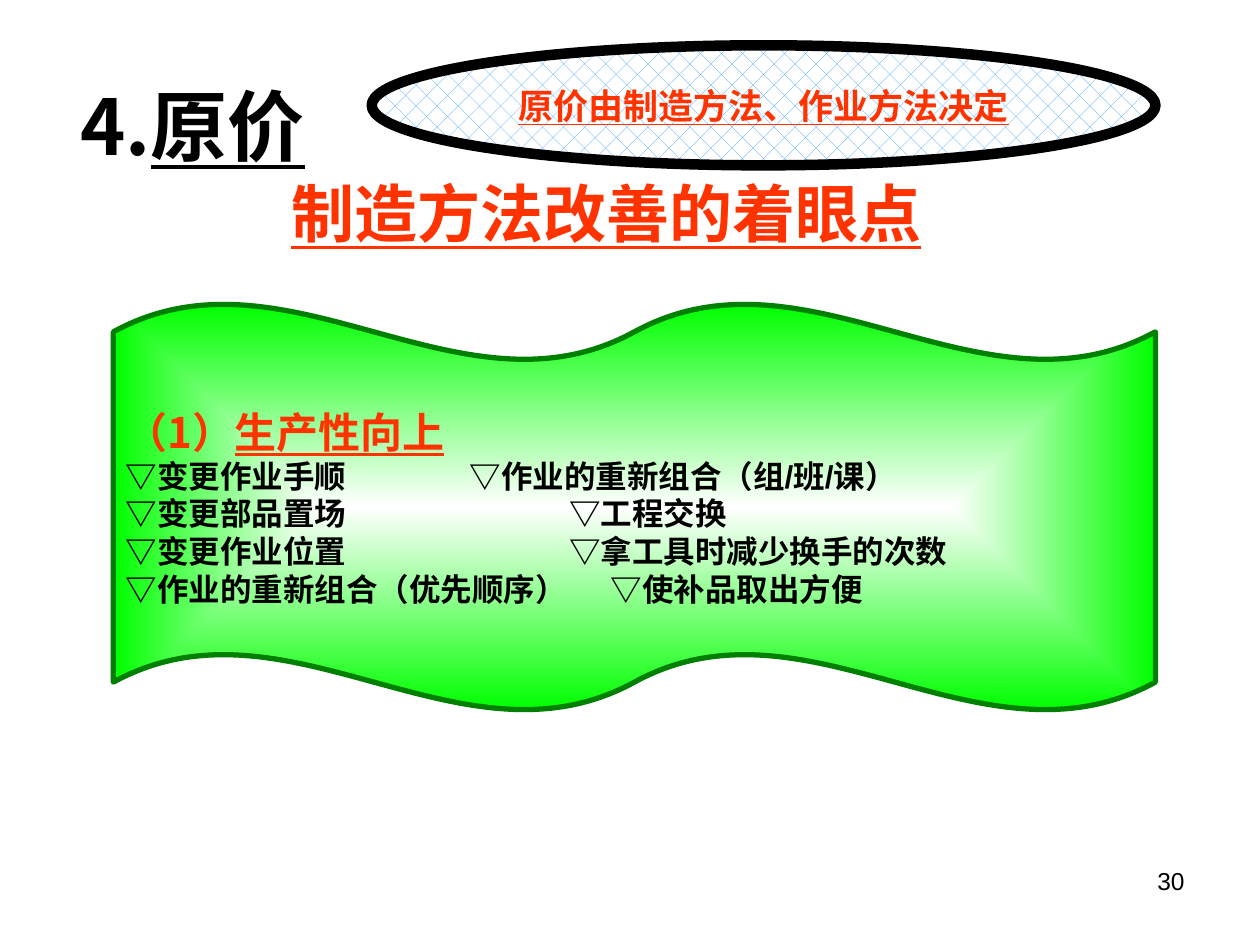
from lxml.etree import SubElement
from pptx import Presentation
from pptx.dml.color import RGBColor
from pptx.enum.dml import MSO_PATTERN
from pptx.enum.shapes import MSO_SHAPE
from pptx.enum.text import MSO_ANCHOR, PP_ALIGN
from pptx.oxml.ns import qn
from pptx.util import Inches, Pt

COLORS = {"black": "000000", "white": "FFFFFF", "red": "FF3300",
          "green": "00FF00", "edge": "008000", "blue": "3399FF"}
LATIN, CJK = "Arial", "Noto Sans CJK SC"
WIDTH, HEIGHT = 10, 7.5

IDEAS = [
    ("▽变更作业手顺", "▽作业的重新组合（组/班/课）", 2.73),
    ("▽变更部品置场", "▽工程交换", 3.52),
    ("▽变更作业位置", "▽拿工具时减少换手的次数", 3.52),
    ("▽作业的重新组合（优先顺序）", "▽使补品取出方便", 3.85),
]


def color(name):
    return RGBColor.from_string(COLORS[name])


def place(box):
    x, y, w, h = box
    return Inches(x * WIDTH), Inches(y * HEIGHT), Inches(w * WIDTH), Inches(h * HEIGHT)


def add_run(p, text, size, fill="black", font=LATIN, bold=True, underline=False):
    r = p.add_run()
    r.text = text
    r.font.size, r.font.bold, r.font.underline = Pt(size), bold, underline
    r.font.name = font
    r.font.color.rgb = color(fill)
    SubElement(r.font._element, qn("a:ea")).set("typeface", CJK)


def set_frame(sp, anchor=MSO_ANCHOR.MIDDLE, align=PP_ALIGN.LEFT, wrap=True):
    tf = sp.text_frame
    tf.word_wrap, tf.vertical_anchor = wrap, anchor
    tf.paragraphs[0].alignment = align
    return tf


def add_text(s, box, **frame):
    return set_frame(s.shapes.add_textbox(*place(box)), **frame).paragraphs[0]


def add_outlined(s, kind, box, line, width):
    sp = s.shapes.add_shape(kind, *place(box))
    sp.shadow.inherit = False
    sp.line.color.rgb = color(line)
    sp.line.width = Pt(width)
    return sp


def add_heading(s, box):
    p = add_text(s, box)
    add_run(p, "4.", 44, font=CJK)
    add_run(p, "原价", 44, font=CJK, underline=True)


def add_subtitle(s, box):
    p = add_text(s, box, align=PP_ALIGN.CENTER)
    add_run(p, "制造方法改善的着眼点", 36, "red", underline=True)


def add_motto(s, box):
    sp = add_outlined(s, MSO_SHAPE.OVAL, box, "black", 6)
    sp.fill.patterned()
    sp.fill.pattern = MSO_PATTERN.DOTTED_DIAMOND
    sp.fill.fore_color.rgb = color("blue")
    sp.fill.back_color.rgb = color("white")
    p = set_frame(sp, align=PP_ALIGN.CENTER, wrap=False).paragraphs[0]
    add_run(p, "原价由制造方法、作业方法决定", 20, "red", underline=True)


def fill_from_center(sp, inner, outer):
    sp.fill.gradient()
    for stop, name in zip(sp.fill.gradient_stops, (inner, outer)):
        stop.color.rgb = color(name)
    grad = sp._element.spPr.find(qn("a:gradFill"))
    grad.remove(grad.find(qn("a:lin")))
    shade = SubElement(grad, qn("a:path"))
    shade.set("path", "rect")
    center = SubElement(shade, qn("a:fillToRect"))
    for side in "ltrb":
        center.set(side, "50000")


def add_tab(p, pos):
    tabs = SubElement(p._p.get_or_add_pPr(), qn("a:tabLst"))
    tab = SubElement(tabs, qn("a:tab"))
    tab.set("pos", str(Inches(pos)))
    tab.set("algn", "l")


def add_wave(s, box):
    sp = add_outlined(s, MSO_SHAPE.DOUBLE_WAVE, box, "edge", 3)
    sp.adjustments[0], sp.adjustments[1] = 0.07, 0
    fill_from_center(sp, "white", "green")
    tf = set_frame(sp)
    p = tf.paragraphs[0]
    add_run(p, "（1）", 24, "red", CJK)
    add_run(p, "生产性向上", 24, "red", CJK, underline=True)
    for left, right, pos in IDEAS:
        p = tf.add_paragraph()
        p.alignment = PP_ALIGN.LEFT
        add_tab(p, pos)
        add_run(p, left + "\t", 18, font=CJK)
        add_run(p, right, 18)


def add_number(s, box):
    p = add_text(s, box, anchor=MSO_ANCHOR.TOP, align=PP_ALIGN.RIGHT)
    add_run(p, "30", 14, bold=False)


def main():
    prs = Presentation()
    prs.slide_width, prs.slide_height = Inches(WIDTH), Inches(HEIGHT)
    s = prs.slides.add_slide(prs.slide_layouts[6])
    add_number(s, (0.717, 0.91, 0.233, 0.07))
    add_subtitle(s, (0.21, 0.175, 0.542, 0.1))
    add_wave(s, (0.09, 0.321, 0.827, 0.431))
    add_heading(s, (0.054, 0.048, 0.934, 0.167))
    add_motto(s, (0.295, 0.048, 0.622, 0.127))
    prs.save("out.pptx")


if __name__ == "__main__":
    main()
